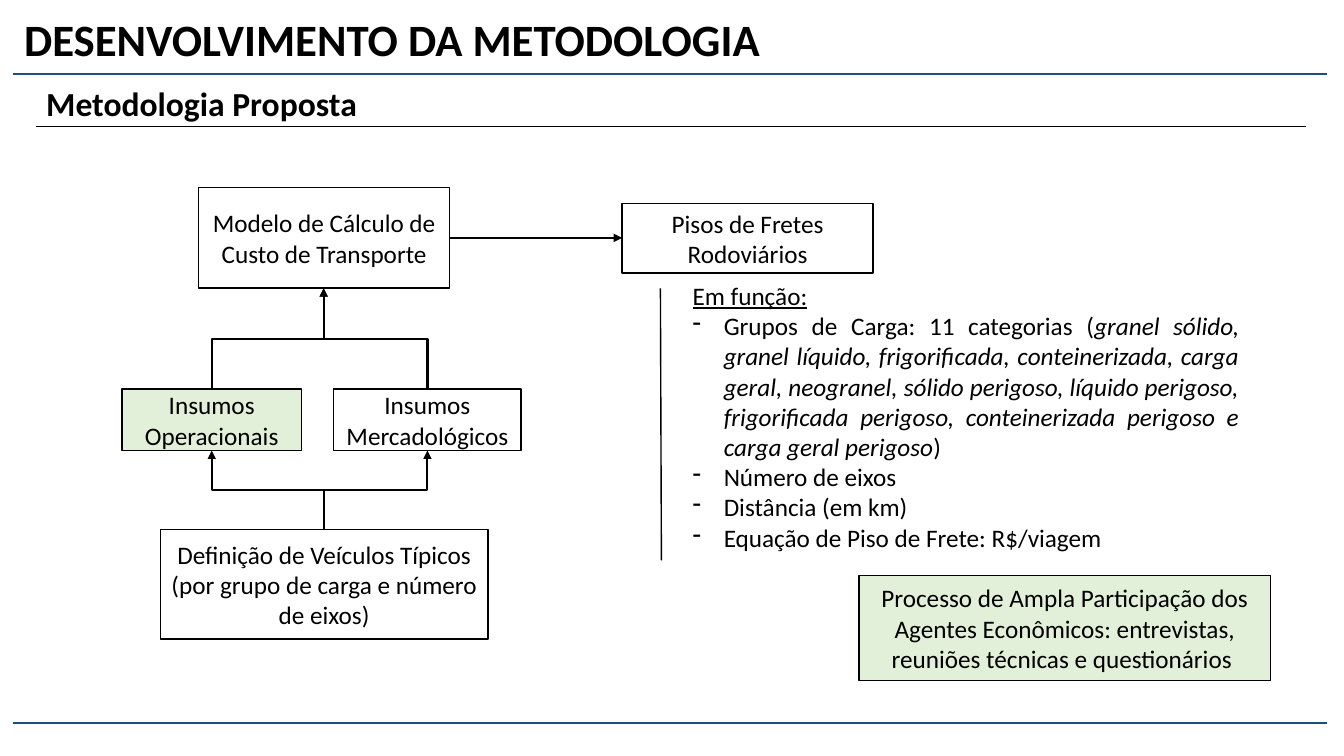
"""Build the slide on the proposed methodology for road freight floors."""
from dataclasses import dataclass

import pptx
import pptx.dml.color
import pptx.enum.shapes
import pptx.enum.text
import pptx.oxml.ns
import pptx.util
from lxml import etree

Inches = pptx.util.Inches
Pt = pptx.util.Pt
RGBColor = pptx.dml.color.RGBColor
CONNECTOR = pptx.enum.shapes.MSO_CONNECTOR
ALIGN = pptx.enum.text.PP_ALIGN
ANCHOR = pptx.enum.text.MSO_ANCHOR
qn = pptx.oxml.ns.qn

BLACK = RGBColor(0, 0, 0)
WHITE = RGBColor(0xFF, 0xFF, 0xFF)
NAVY = RGBColor(0x1F, 0x4E, 0x79)
GREEN = RGBColor(0xE2, 0xF0, 0xD9)
FONT = "Calibri"
HANGING = Inches(0.31)


@dataclass(frozen=True)
class Box:
    text: str
    left: float
    top: float
    width: float
    height: float
    fill: RGBColor = WHITE


@dataclass(frozen=True)
class Rule:
    x1: float
    y1: float
    x2: float
    y2: float
    weight: float
    color: RGBColor = BLACK
    arrow: bool = False


@dataclass(frozen=True)
class Elbow:
    x1: float
    y1: float
    x2: float
    y2: float


@dataclass(frozen=True)
class Heading:
    text: str
    left: float
    top: float
    width: float
    height: float
    size: int
    anchor: ANCHOR


HEADINGS = [
    Heading("DESENVOLVIMENTO DA METODOLOGIA", 0.14, 0.14, 12.01, 0.55, 32, ANCHOR.MIDDLE),
    Heading("Metodologia Proposta", 0.36, 0.82, 12.6, 0.45, 24, ANCHOR.TOP),
]
BOXES = [
    Box("Modelo de Cálculo de Custo de Transporte", 1.97, 1.86, 2.49, 1),
    Box("Definição de Veículos Típicos (por grupo de carga e número de eixos)",
        1.59, 5.25, 3.25, 1.09),
    Box("Insumos Operacionais", 1.21, 3.86, 1.78, 0.61, GREEN),
    Box("Insumos Mercadológicos", 3.31, 3.86, 1.86, 0.61),
    Box("Pisos de Fretes Rodoviários", 6.17, 2.02, 2.49, 0.69),
    Box("Processo de Ampla Participação dos Agentes Econômicos: entrevistas, "
        "reuniões técnicas e questionários ", 8.52, 5.71, 4.08, 1.04, GREEN),
]
RULES = [
    Rule(0.13, 0.73, 13.16, 0.73, 1.5, NAVY),
    Rule(0.13, 7.17, 13.16, 7.17, 1.5, NAVY),
    Rule(0.36, 1.25, 12.95, 1.25, 0.5),
    Rule(6.55, 2.86, 6.56, 5.56, 1),
    Rule(4.46, 2.36, 6.17, 2.36, 1.5, arrow=True),
]
CENTER_X = 3.21
INPUT_XS = (2.1, 4.24)
ELBOWS = [Elbow(x, 3.86, CENTER_X, 2.86) for x in INPUT_XS]
ELBOWS += [Elbow(CENTER_X, 5.25, x, 4.47) for x in INPUT_XS]
FACTORS = [
    ("Grupos de Carga: 11 categorias (",
     "granel sólido, granel líquido, frigorificada, conteinerizada, carga geral, "
     "neogranel, sólido perigoso, líquido perigoso, frigorificada perigoso, "
     "conteinerizada perigoso e carga geral perigoso", ")"),
    ("Número de eixos",),
    ("Distância (em km)",),
    ("Equação de Piso de Frete: R$/viagem",),
]


def style_runs(p, size: int = 18, bold: bool = False) -> None:
    for r in p.runs:
        r.font.name = FONT
        r.font.size = Pt(size)
        r.font.bold = bold
        r.font.color.rgb = BLACK


def add_heading(s, heading: Heading) -> None:
    tb = s.shapes.add_textbox(Inches(heading.left), Inches(heading.top),
                              Inches(heading.width), Inches(heading.height))
    tf = tb.text_frame
    tf.word_wrap = True
    tf.vertical_anchor = heading.anchor
    tf.text = heading.text
    p = tf.paragraphs[0]
    p.line_spacing = 0.9
    style_runs(p, heading.size, True)


def add_box(s, box: Box) -> None:
    sp = s.shapes.add_shape(pptx.enum.shapes.MSO_SHAPE.RECTANGLE,
                            Inches(box.left), Inches(box.top),
                            Inches(box.width), Inches(box.height))
    sp.shadow.inherit = False
    sp.fill.solid()
    sp.fill.fore_color.rgb = box.fill
    sp.line.color.rgb = BLACK
    sp.line.width = Pt(1)
    tf = sp.text_frame
    tf.word_wrap = True
    tf.vertical_anchor = ANCHOR.MIDDLE
    tf.text = box.text
    p = tf.paragraphs[0]
    p.alignment = ALIGN.CENTER
    style_runs(p)


def add_rule(s, rule: Rule, kind: CONNECTOR = CONNECTOR.STRAIGHT):
    c = s.shapes.add_connector(kind, Inches(rule.x1), Inches(rule.y1),
                               Inches(rule.x2), Inches(rule.y2))
    c.line.color.rgb = rule.color
    c.line.width = Pt(rule.weight)
    spPr = c._element.spPr
    if rule.arrow:
        etree.SubElement(spPr.find(qn("a:ln")), qn("a:tailEnd"), type="triangle")
    etree.SubElement(spPr, qn("a:effectLst"))
    return c


def add_elbow(s, elbow: Elbow) -> None:
    cx, cy = (elbow.x1 + elbow.x2) / 2, (elbow.y1 + elbow.y2) / 2
    half_w, half_h = (elbow.y1 - elbow.y2) / 2, (elbow.x2 - elbow.x1) / 2
    rule = Rule(cx - half_w, cy - half_h, cx + half_w, cy + half_h, 1.5, arrow=True)
    c = add_rule(s, rule, CONNECTOR.ELBOW)
    c._element.spPr.find(qn("a:xfrm")).set("rot", str(270 * 60000))


def add_factors(s) -> None:
    tb = s.shapes.add_textbox(Inches(6.77), Inches(2.73), Inches(5.62), Inches(2.83))
    tf = tb.text_frame
    tf.word_wrap = True
    tf.text = "Em função:"
    p = tf.paragraphs[0]
    p.alignment = ALIGN.JUSTIFY
    style_runs(p)
    p.runs[0].font.underline = True
    for parts in FACTORS:
        p = tf.add_paragraph()
        p.alignment = ALIGN.JUSTIFY
        pPr = p._p.get_or_add_pPr()
        pPr.set("marL", str(HANGING))
        pPr.set("indent", str(-HANGING))
        etree.SubElement(pPr, qn("a:buChar"), char="-")
        for i, part in enumerate(parts):
            r = p.add_run()
            r.text = part
            r.font.italic = i == 1
        style_runs(p)


def main() -> None:
    prs = pptx.Presentation()
    prs.slide_width = Inches(13.33)
    prs.slide_height = Inches(7.5)
    s = prs.slides.add_slide(prs.slide_layouts[6])
    for rule in RULES:
        add_rule(s, rule)
    for heading in HEADINGS:
        add_heading(s, heading)
    for box in BOXES:
        add_box(s, box)
    for elbow in ELBOWS:
        add_elbow(s, elbow)
    add_factors(s)
    prs.save("out.pptx")


if __name__ == "__main__":
    main()
